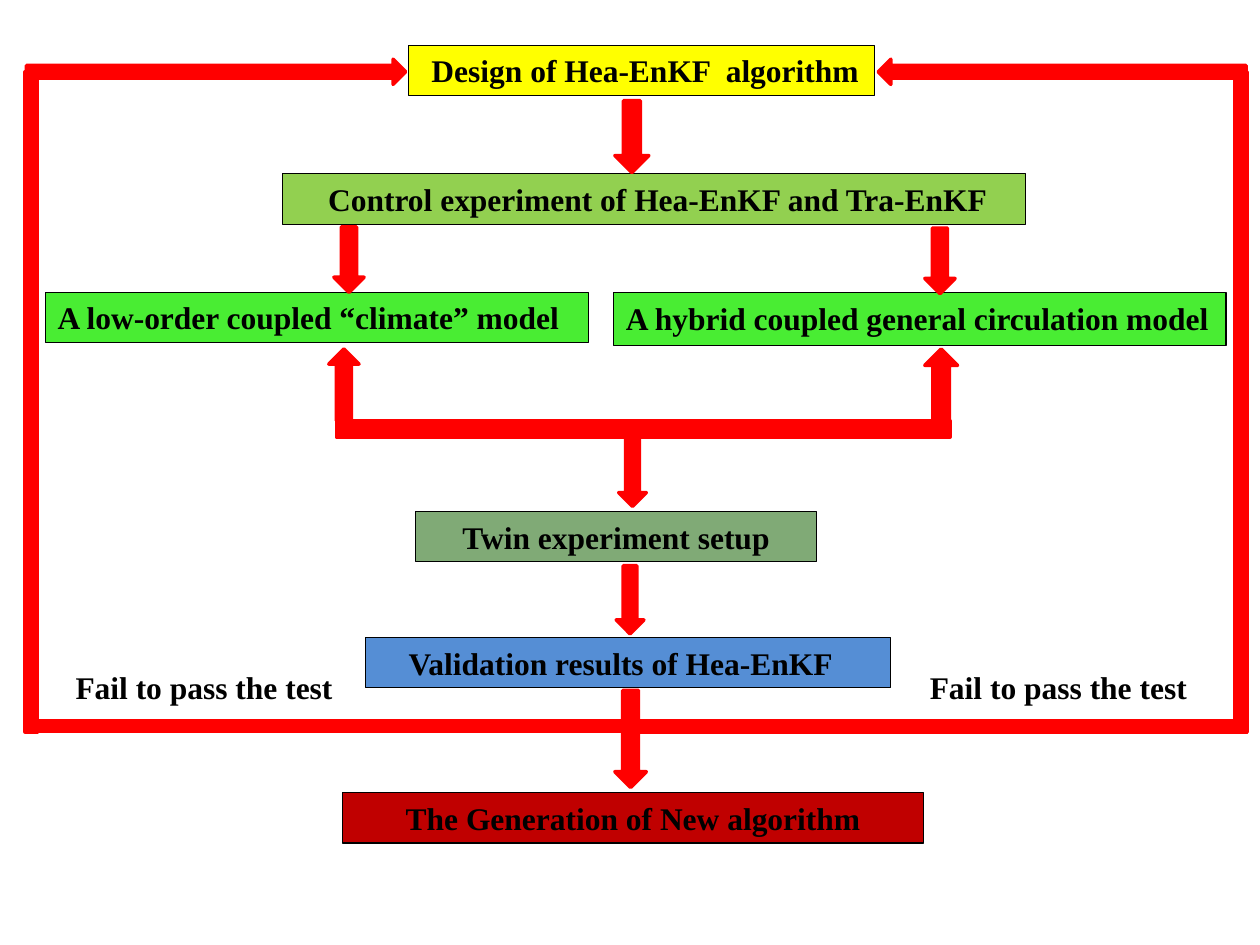
from pptx import Presentation
from pptx.dml.color import RGBColor
from pptx.enum.shapes import MSO_SHAPE
from pptx.enum.text import MSO_ANCHOR, PP_ALIGN
from pptx.util import Inches, Pt

RECT = MSO_SHAPE.RECTANGLE
UP, DOWN = MSO_SHAPE.UP_ARROW, MSO_SHAPE.DOWN_ARROW
LEFT_ARROW, RIGHT_ARROW = MSO_SHAPE.LEFT_ARROW, MSO_SHAPE.RIGHT_ARROW
LEFT, CENTER, TOP = PP_ALIGN.LEFT, PP_ALIGN.CENTER, MSO_ANCHOR.TOP

BLACK = RGBColor(0x00, 0x00, 0x00)
RED = RGBColor(0xFF, 0x00, 0x00)
YELLOW = RGBColor(0xFF, 0xFF, 0x00)
OLIVE = RGBColor(0x92, 0xD0, 0x50)
GREEN = RGBColor(0x49, 0xED, 0x33)
SAGE = RGBColor(0x80, 0xAA, 0x76)
BLUE = RGBColor(0x55, 0x8E, 0xD5)
DARK_RED = RGBColor(0xC0, 0x00, 0x00)

# Steps: text, fill, alignment, (left, top, width, height)
STEPS = [
    (" Design of Hea-EnKF  algorithm ", YELLOW, CENTER, (3.24, 0.36, 3.7, 0.4)),
    (" Control experiment of Hea-EnKF and Tra-EnKF", OLIVE, CENTER,
     (2.24, 1.38, 5.9, 0.4)),
    ("A low-order coupled “climate” model", GREEN, LEFT, (0.36, 2.32, 4.31, 0.4)),
    ("A hybrid coupled general circulation model", GREEN, LEFT,
     (4.87, 2.32, 4.86, 0.42)),
    ("Twin experiment setup", SAGE, CENTER, (3.3, 4.06, 3.18, 0.4)),
    ("Validation results of Hea-EnKF  ", BLUE, CENTER, (2.9, 5.06, 4.17, 0.4)),
    ("The Generation of New algorithm", DARK_RED, CENTER, (2.72, 6.29, 4.61, 0.4)),
]

FAIL_TEXT = "Fail to pass the test"
FAIL_PLACES = [(0.44, 5.25, 2.36, 0.4), (7.2, 5.25, 2.4, 0.4)]

# Red arrows and bars: preset, (left, top, width, height)
FLOWS = [
    # Models joined to the twin experiment
    (UP, (2.61, 2.77, 0.24, 0.57)),
    (UP, (7.34, 2.77, 0.26, 0.62)),
    (RECT, (2.67, 3.34, 4.87, 0.13)),
    (DOWN, (4.91, 3.48, 0.22, 0.54)),
    # Steps downwards
    (DOWN, (4.88, 0.8, 0.27, 0.57)),
    (DOWN, (2.65, 1.8, 0.24, 0.52)),
    (DOWN, (7.34, 1.81, 0.24, 0.52)),
    (DOWN, (4.89, 4.49, 0.22, 0.54)),
    (DOWN, (4.88, 5.48, 0.25, 0.77)),
    # Loops back to the design
    (RECT, (0.28, 5.72, 4.75, 0.08)),
    (RECT, (5.04, 5.72, 4.85, 0.09)),
    (RECT, (0.2, 0.57, 0.1, 5.24)),
    (RECT, (9.8, 0.57, 0.1, 5.24)),
    (RIGHT_ARROW, (0.21, 0.47, 3.01, 0.2)),
    (LEFT_ARROW, (6.97, 0.47, 2.92, 0.2)),
]


def add_block(page, preset, place, fill, line, weight):
    block = page.shapes.add_shape(preset, *map(Inches, place))
    block.shadow.inherit = False
    block.fill.solid()
    block.fill.fore_color.rgb = fill
    block.line.color.rgb = line
    block.line.width = Pt(weight)
    return block


def write(box, text, align):
    frame = box.text_frame
    frame.word_wrap = True
    frame.vertical_anchor = TOP
    frame.text = text
    para = frame.paragraphs[0]
    para.alignment = align
    font = para.runs[0].font
    font.name, font.size, font.bold = "Times New Roman", Pt(18), True
    font.color.rgb = BLACK


deck = Presentation()
deck.slide_width, deck.slide_height = Inches(10), Inches(7.5)
page = deck.slides.add_slide(deck.slide_layouts[6])

# Labels on the loops
for place in FAIL_PLACES:
    write(page.shapes.add_textbox(*map(Inches, place)), FAIL_TEXT, CENTER)

# Step boxes
for text, fill, align, place in STEPS:
    write(add_block(page, RECT, place, fill, BLACK, 0.75), text, align)

# Arrows and bars
for preset, place in FLOWS:
    add_block(page, preset, place, RED, RED, 2)

deck.save("out.pptx")
